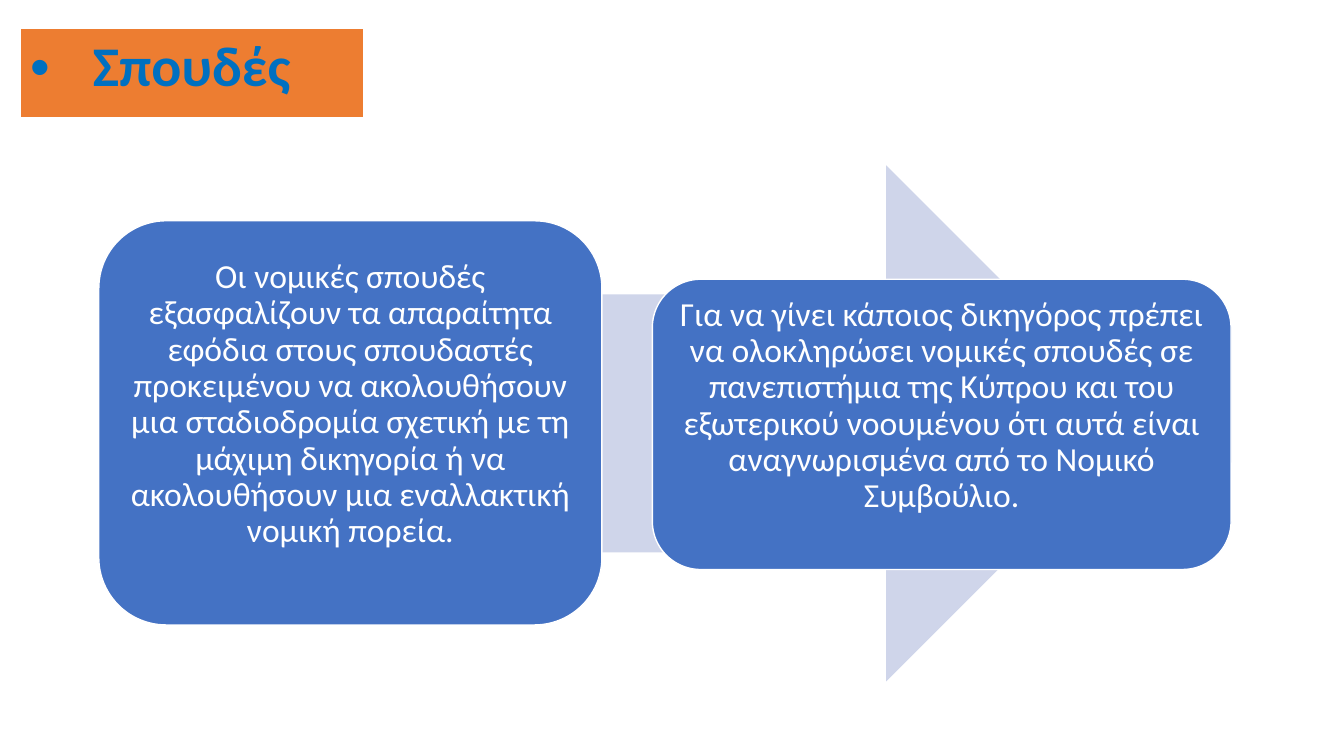
import pptx
import pptx.util
import pptx.dml.color
import pptx.enum.shapes
import pptx.enum.text
import pptx.oxml
import pptx.oxml.ns

RGBColor = pptx.dml.color.RGBColor
WHITE = RGBColor(0xFF, 0xFF, 0xFF)
BLUE = RGBColor(0x44, 0x72, 0xC4)
PALE = RGBColor(0xCF, 0xD5, 0xEA)
ORANGE = RGBColor(0xED, 0x7D, 0x31)
INK = RGBColor(0x00, 0x70, 0xC0)

SHAPE = pptx.enum.shapes.MSO_SHAPE
NS = pptx.oxml.ns.nsdecls("a")

STUDIES = (
    "Οι νομικές σπουδές εξασφαλίζουν τα απαραίτητα εφόδια στους σπουδαστές "
    "προκειμένου να ακολουθήσουν μια σταδιοδρομία σχετική με τη μάχιμη δικηγορία "
    "ή να ακολουθήσουν μια εναλλακτική νομική πορεία."
)
LAWYER = (
    "Για να γίνει κάποιος δικηγόρος πρέπει να ολοκληρώσει νομικές σπουδές σε "
    "πανεπιστήμια της Κύπρου και του εξωτερικού νοουμένου ότι αυτά είναι "
    "αναγνωρισμένα από το Νομικό Συμβούλιο."
)


class Page:
    """Draws on a grid whose columns and rows are a tenth of an inch."""

    font = "Calibri"
    unit = pptx.util.Inches(0.1)

    def __init__(self, slide):
        self.slide = slide

    def grid(self, *cells):
        return [round(cell * self.unit) for cell in cells]

    def text(self, para, words, size, color, bold=False):
        run = para.add_run()
        run.text = words
        run.font.name = self.font
        run.font.size = pptx.util.Pt(size)
        run.font.bold = bold
        run.font.color.rgb = color

    def shape(self, kind, place, fill, line=None):
        shape = self.slide.shapes.add_shape(kind, *self.grid(*place))
        shape.shadow.inherit = False
        shape.fill.solid()
        shape.fill.fore_color.rgb = fill
        if line is None:
            shape.line.fill.background()
        else:
            shape.line.color.rgb = line
            shape.line.width = pptx.util.Pt(1)
        return shape

    def card(self, place, words):
        frame = self.shape(SHAPE.ROUNDED_RECTANGLE, place, BLUE, WHITE).text_frame
        frame.word_wrap = True
        frame.vertical_anchor = pptx.enum.text.MSO_ANCHOR.MIDDLE
        # The deeper bottom inset lifts the text above the middle
        (frame.margin_left, frame.margin_top,
         frame.margin_right, frame.margin_bottom) = self.grid(1, 0, 1, 3.6)
        para = frame.paragraphs[0]
        para.alignment = pptx.enum.text.PP_ALIGN.CENTER
        para.line_spacing = 0.9
        self.text(para, words, 24, WHITE)

    def label(self, place, words):
        table = self.slide.shapes.add_table(1, 1, *self.grid(*place)).table
        cell = table.cell(0, 0)
        para = cell.text_frame.paragraphs[0]
        self.text(para, words, 40, INK, bold=True)
        self.bullet(para, 6.2)
        # Borders come before the fill in the cell's XML
        for side, width in (("L", 1), ("R", 1), ("T", 1), ("B", 3)):
            cell._tc.get_or_add_tcPr().append(pptx.oxml.parse_xml(
                f'<a:ln{side} {NS} w="{pptx.util.Pt(width)}"><a:solidFill>'
                f'<a:srgbClr val="{WHITE}"/></a:solidFill></a:ln{side}>'))
        cell.fill.solid()
        cell.fill.fore_color.rgb = ORANGE

    def bullet(self, para, indent):
        props = para._p.get_or_add_pPr()
        step = self.grid(indent)[0]
        props.set("marL", str(step))
        props.set("indent", str(-step))
        for mark in (f'<a:buFont {NS} typeface="Arial"/>',
                     f'<a:buChar {NS} char="•"/>'):
            props.append(pptx.oxml.parse_xml(mark))


def main():
    deck = pptx.Presentation()
    deck.slide_width = pptx.util.Inches(13.33)
    deck.slide_height = pptx.util.Inches(7.5)
    page = Page(deck.slides.add_slide(deck.slide_layouts[6]))

    # Arrow behind the two steps
    page.shape(SHAPE.RIGHT_ARROW, (17.6, 16.4, 95.9, 51.2), PALE)

    # Steps
    page.card((9.8, 21.9, 49.9, 40.1), STUDIES)
    page.card((64.7, 27.7, 57.4, 28.8), LAWYER)

    # Heading
    page.label((2, 2.8, 34.1, 9), "Σπουδές")

    deck.save("out.pptx")


if __name__ == "__main__":
    main()
